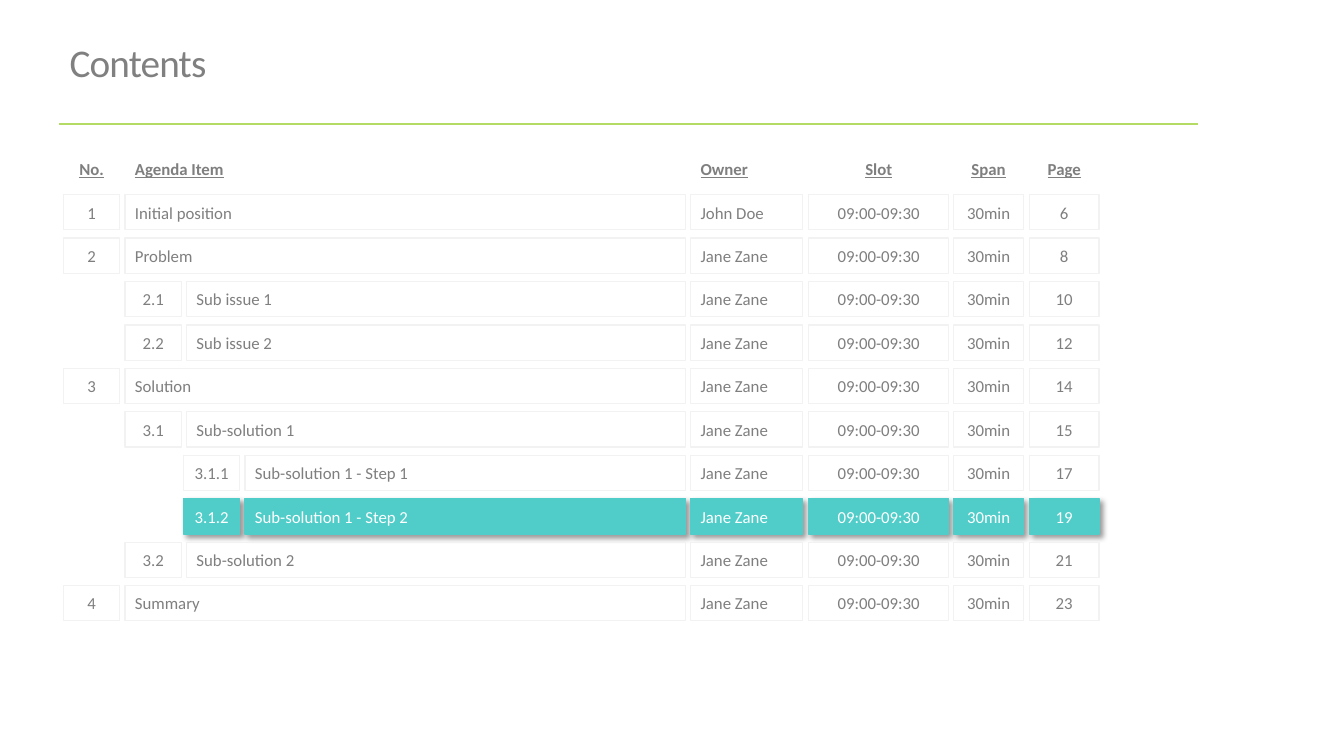
from dataclasses import dataclass

from lxml import etree
from pptx import Presentation
from pptx.dml.color import RGBColor
from pptx.enum.shapes import MSO_CONNECTOR, MSO_SHAPE
from pptx.enum.text import MSO_ANCHOR, MSO_AUTO_SIZE, PP_ALIGN
from pptx.oxml.ns import qn
from pptx.util import Inches, Pt

LEFT, CENTER = PP_ALIGN.LEFT, PP_ALIGN.CENTER
MIDDLE = MSO_ANCHOR.MIDDLE
NO_FIT = MSO_AUTO_SIZE.NONE
RECT = MSO_SHAPE.RECTANGLE
STRAIGHT = MSO_CONNECTOR.STRAIGHT
TITLE_ONLY = 5


@dataclass(frozen=True)
class Theme:
    font: str = "Calibri"
    title: RGBColor = RGBColor(0x80, 0x80, 0x80)
    text: RGBColor = RGBColor(0x7F, 0x7F, 0x7F)
    border: RGBColor = RGBColor(0xF2, 0xF2, 0xF2)
    accent: RGBColor = RGBColor(0x50, 0xCD, 0xC8)
    on_accent: RGBColor = RGBColor(0xFF, 0xFF, 0xFF)
    rule: RGBColor = RGBColor(0xB4, 0xDC, 0x64)
    title_size: float = 28
    body_size: float = 12


@dataclass(frozen=True)
class Column:
    x: float
    w: float
    align: PP_ALIGN = CENTER
    tight: bool = False


@dataclass(frozen=True)
class AgendaRow:
    no: str
    item: str
    page: str
    owner: str = "Jane Zane"
    slot: str = "09:00-09:30"
    span: str = "30min"
    header: bool = False
    active: bool = False


THEME = Theme()

# Grid, in inches
TOP, PITCH, ROW_H = 1.5, 4.31 / 10, 0.35
LEVEL_X = (0.63, 1.24, 1.82)
NO_W, ITEM_OFFSET, ITEM_RIGHT = 0.56, 0.61, 6.8
FIXED_COLUMNS = (
    Column(6.85, 1.11, LEFT),
    Column(8.02, 1.39),
    Column(9.46, 0.69),
    Column(10.21, 0.69),
)

ROWS = (
    AgendaRow("No.", "Agenda Item", "Page", "Owner", "Slot", "Span", header=True),
    AgendaRow("1", "Initial position", "6", owner="John Doe"),
    AgendaRow("2", "Problem", "8"),
    AgendaRow("2.1", "Sub issue 1", "10"),
    AgendaRow("2.2", "Sub issue 2", "12"),
    AgendaRow("3", "Solution", "14"),
    AgendaRow("3.1", "Sub-solution 1", "15"),
    AgendaRow("3.1.1", "Sub-solution 1 - Step 1", "17"),
    AgendaRow("3.1.2", "Sub-solution 1 - Step 2", "19", active=True),
    AgendaRow("3.2", "Sub-solution 2", "21"),
    AgendaRow("4", "Summary", "23"),
)


def add_shadow(sp) -> None:
    effects = sp._element.spPr.find(qn("a:effectLst"))
    shadow = etree.SubElement(effects, qn("a:outerShdw"), blurRad=str(Pt(4)),
                              dist=str(Pt(3)), dir="2700000", algn="tl", rotWithShape="0")
    color = etree.SubElement(shadow, qn("a:srgbClr"), val="000000")
    etree.SubElement(color, qn("a:alpha"), val="40000")


def add_cell(slide, col: Column, y: float, text: str, row: AgendaRow) -> None:
    box = Inches(col.x), Inches(y), Inches(col.w), Inches(ROW_H)
    if row.header:
        sp = slide.shapes.add_textbox(*box)
    else:
        sp = slide.shapes.add_shape(RECT, *box)
        sp.line.color.rgb = THEME.accent if row.active else THEME.border
        sp.line.width = Pt(0.85)
        sp.shadow.inherit = False
        if row.active:
            sp.fill.solid()
            sp.fill.fore_color.rgb = THEME.accent
            add_shadow(sp)
        else:
            sp.fill.background()

    tf = sp.text_frame
    tf.auto_size = NO_FIT
    tf.vertical_anchor = MIDDLE
    tf.word_wrap = not col.tight
    if col.tight:
        tf.margin_left = tf.margin_right = tf.margin_top = tf.margin_bottom = 0
    p = tf.paragraphs[0]
    p.alignment = col.align
    r = p.add_run()
    r.text = text
    r.font.name = THEME.font
    r.font.size = Pt(THEME.body_size)
    r.font.color.rgb = THEME.on_accent if row.active else THEME.text
    if row.header:
        r.font.bold = r.font.underline = True


def add_row(slide, index: int, row: AgendaRow) -> None:
    # The numbering depth sets the indent
    x = LEVEL_X[0 if row.header else row.no.count(".")]
    item_x = x + ITEM_OFFSET
    columns = (Column(x, NO_W, tight=True),
               Column(item_x, ITEM_RIGHT - item_x, LEFT), *FIXED_COLUMNS)
    texts = (row.no, row.item, row.owner, row.slot, row.span, row.page)
    for col, text in zip(columns, texts):
        add_cell(slide, col, TOP + index * PITCH, text, row)


def add_title(slide, text: str) -> None:
    sp = slide.shapes.title
    sp.left, sp.top = Inches(0.59), Inches(0.18)
    sp.width, sp.height = Inches(11.25), Inches(0.93)
    tf = sp.text_frame
    tf.auto_size = NO_FIT
    tf.vertical_anchor = MIDDLE
    p = tf.paragraphs[0]
    p.alignment = LEFT
    p.line_spacing = 0.9
    r = p.add_run()
    r.text = text
    r.font.name = THEME.font
    r.font.size = Pt(THEME.title_size)
    r.font.color.rgb = THEME.title
    r.font._element.set("spc", "-60")


def add_rule(slide) -> None:
    line = slide.shapes.add_connector(STRAIGHT, Inches(0.59), Inches(1.23),
                                      Inches(11.88), Inches(1.23))
    line.line.color.rgb = THEME.rule
    line.line.width = Pt(2)
    etree.SubElement(line._element.spPr, qn("a:effectLst"))


def main() -> None:
    prs = Presentation()
    prs.slide_width, prs.slide_height = Inches(13.33), Inches(7.5)
    slide = prs.slides.add_slide(prs.slide_layouts[TITLE_ONLY])

    # Heading
    add_title(slide, "Contents")
    add_rule(slide)

    # Agenda
    for index, row in enumerate(ROWS):
        add_row(slide, index, row)

    prs.save("out.pptx")


if __name__ == "__main__":
    main()
